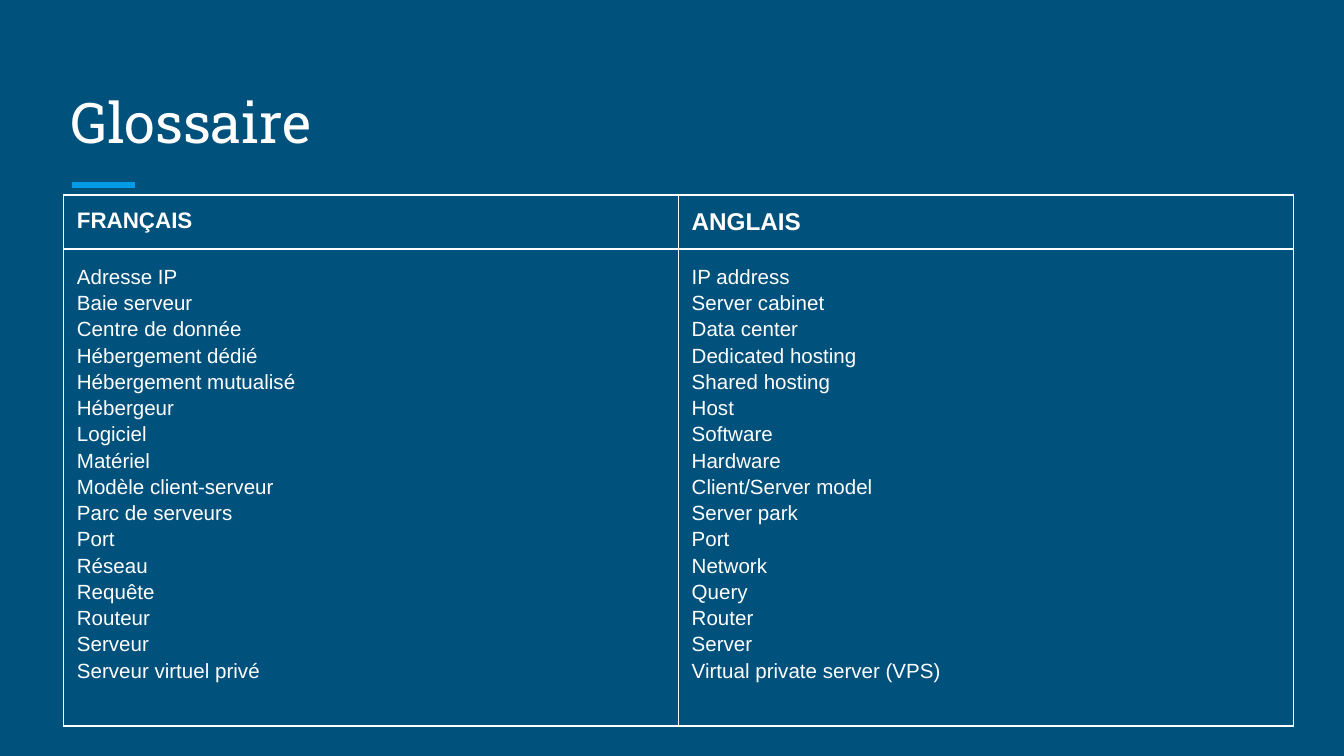
from lxml import etree
from pptx import Presentation
from pptx import util as u
from pptx.dml.color import RGBColor
from pptx.enum import shapes, text
from pptx.oxml.ns import qn

NAVY = RGBColor(0x00, 0x51, 0x7C)
SKY = RGBColor(0x03, 0x9B, 0xE5)
WHITE = RGBColor(0xFF, 0xFF, 0xFF)
WIDTH = u.Inches(10)
HEIGHT = WIDTH * 9 // 16
INSET = u.Inches(0.1)
BORDER = u.Pt(0.75)
HEADINGS = [("FRANÇAIS", 12), ("ANGLAIS", 13)]
TERMS = [
    ("Adresse IP", "IP address"),
    ("Baie serveur", "Server cabinet"),
    ("Centre de donnée", "Data center"),
    ("Hébergement dédié", "Dedicated hosting"),
    ("Hébergement mutualisé", "Shared hosting"),
    ("Hébergeur", "Host"),
    ("Logiciel", "Software"),
    ("Matériel", "Hardware"),
    ("Modèle client-serveur", "Client/Server model"),
    ("Parc de serveurs", "Server park"),
    ("Port", "Port"),
    ("Réseau", "Network"),
    ("Requête", "Query"),
    ("Routeur", "Router"),
    ("Serveur", "Server"),
    ("Serveur virtuel privé", "Virtual private server (VPS)"),
]


def share_box(left, top, width, height):
    return (int(WIDTH * left / 100), int(HEIGHT * top / 100),
            int(WIDTH * width / 100), int(HEIGHT * height / 100))


def set_margins(holder):
    holder.margin_left = holder.margin_right = INSET
    holder.margin_top = holder.margin_bottom = INSET


def format_runs(paragraph, font_name, size, bold=False):
    for run in paragraph.runs:
        run.font.name = font_name
        run.font.size = u.Pt(size)
        run.font.bold = bold
        run.font.color.rgb = WHITE


def add_heading(slide, box):
    title = slide.shapes.title
    title.left, title.top, title.width, title.height = box
    frame = title.text_frame
    frame.text = "Glossaire"
    frame.auto_size = text.MSO_AUTO_SIZE.NONE
    frame.vertical_anchor = text.MSO_ANCHOR.BOTTOM
    set_margins(frame)
    frame.paragraphs[0].alignment = text.PP_ALIGN.LEFT
    format_runs(frame.paragraphs[0], "Roboto Slab", 30)


def add_accent(slide, box):
    left, top, width, height = box
    accent = slide.shapes.add_connector(
        shapes.MSO_CONNECTOR.STRAIGHT, left, top, left + width, top + height)
    accent.line.color.rgb = SKY
    accent.line.width = u.Pt(3)
    etree.SubElement(accent.line._get_or_add_ln().getparent(), qn("a:effectLst"))


def outline_cell(cell):
    properties = cell._tc.get_or_add_tcPr()
    for position, side in enumerate(("a:lnL", "a:lnR", "a:lnT", "a:lnB")):
        border = etree.Element(qn(side), w=str(BORDER))
        fill = etree.SubElement(border, qn("a:solidFill"))
        etree.SubElement(fill, qn("a:srgbClr"), val=str(WHITE))
        properties.insert(position, border)


def add_glossary(slide, box):
    left, top, width, height = box
    glossary = slide.shapes.add_table(2, 2, left, top, width, height).table
    glossary.first_row = glossary.horz_banding = False
    glossary.rows[0].height = int(height * 0.1)
    glossary.rows[1].height = int(height * 0.9)

    for column, (heading, size) in enumerate(HEADINGS):
        header, body = glossary.cell(0, column), glossary.cell(1, column)
        for cell in (header, body):
            cell.fill.background()
            set_margins(cell)
            outline_cell(cell)
        header.text_frame.text = heading
        format_runs(header.text_frame.paragraphs[0], "Arial", size, bold=True)
        body.text_frame.text = "\n".join(pair[column] for pair in TERMS)
        for term in body.text_frame.paragraphs:
            term.alignment = text.PP_ALIGN.JUSTIFY
            term.line_spacing = 1.15
            format_runs(term, "Arial", 11)


def main():
    deck = Presentation()
    deck.slide_width, deck.slide_height = WIDTH, HEIGHT
    slide = deck.slides.add_slide(deck.slide_layouts[5])
    slide.background.fill.solid()
    slide.background.fill.fore_color.rgb = NAVY
    add_heading(slide, share_box(4.25, 8.9, 91.5, 13.35))
    add_accent(slide, share_box(5.36, 24.5, 4.68, 0))
    add_glossary(slide, share_box(4.72, 25.8, 91.5, 70.1))
    deck.save("out.pptx")


if __name__ == "__main__":
    main()
